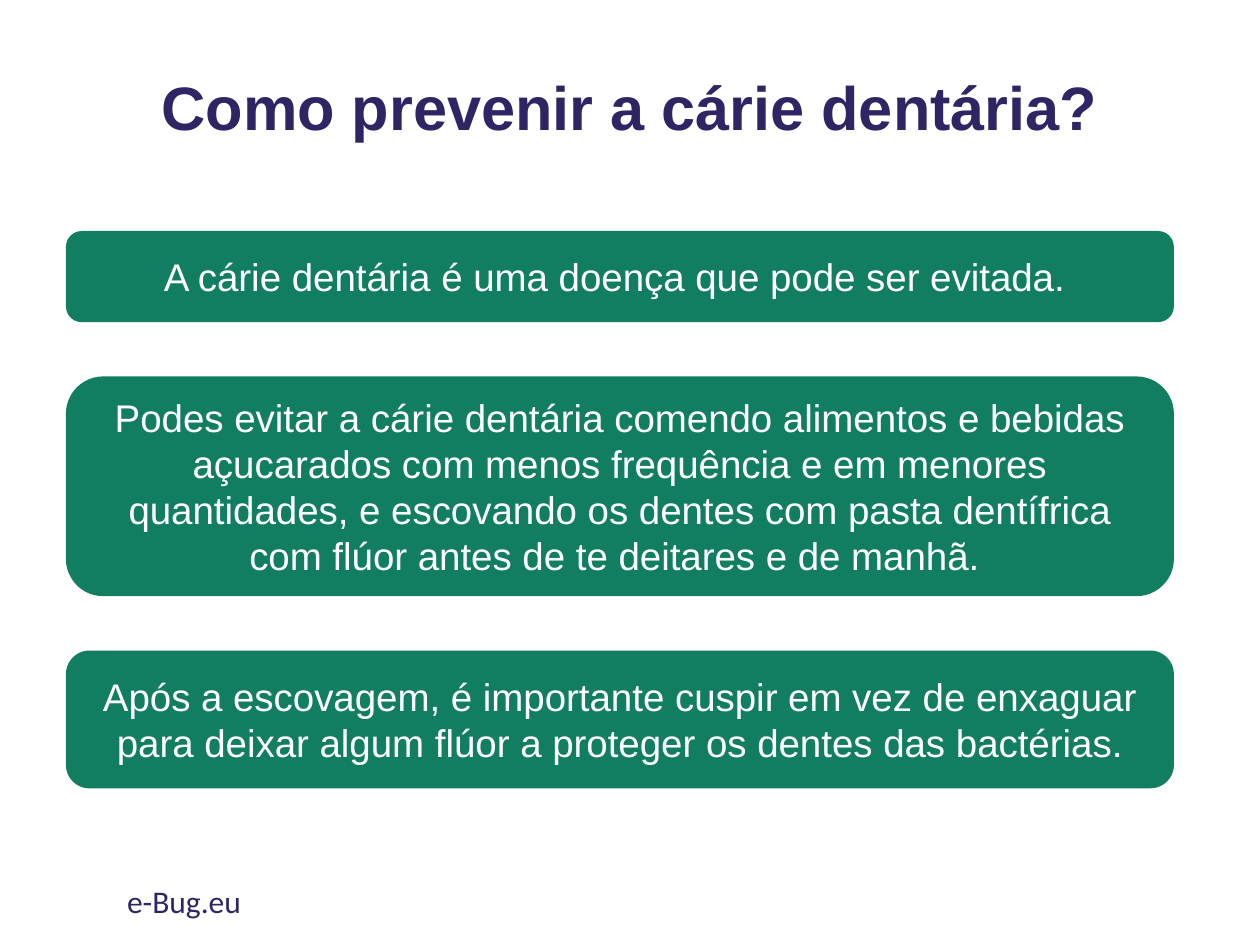
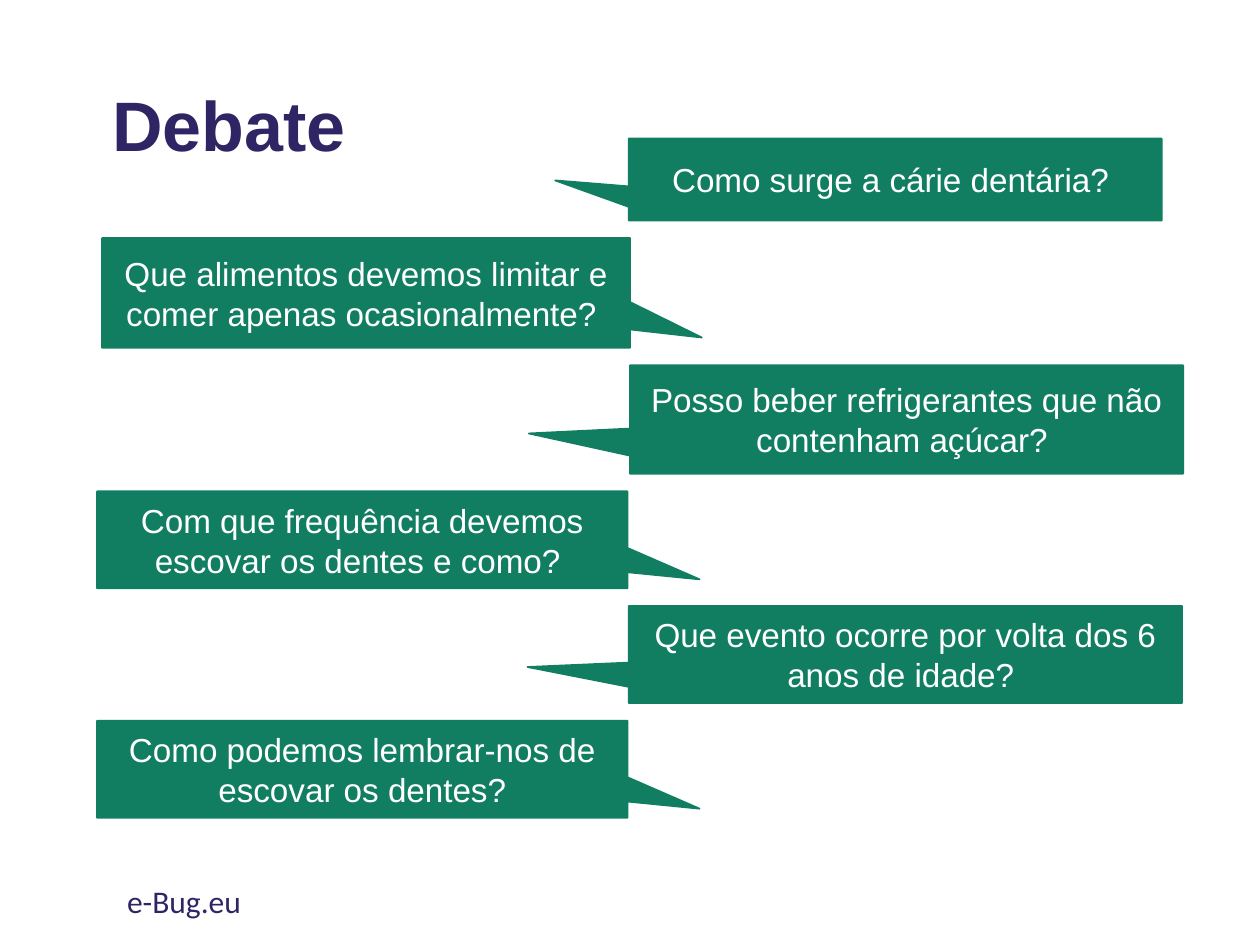
import pptx
import pptx.util
import pptx.dml.color
import pptx.enum.shapes
import pptx.enum.text

COLORS = {"ink": "302564", "green": "117E62", "white": "FFFFFF"}
COLUMNS, ROWS = 100, 75
WIDTH, HEIGHT = pptx.util.Inches(10), pptx.util.Inches(7.5)
TITLE_ONLY = 5
SHAPES = pptx.enum.shapes.MSO_SHAPE
ALIGN = pptx.enum.text.PP_ALIGN
ANCHOR = pptx.enum.text.MSO_ANCHOR

CARD_LEFT, CARD_WIDTH, CARD_GAP = 5.3, 87.8, 4.45
CARDS = [
    (7.1, "A cárie dentária é uma doença que pode ser evitada. "),
    (17.3, "Podes evitar a cárie dentária comendo alimentos e bebidas açucarados "
           "com menos frequência e em menores quantidades, e escovando os dentes "
           "com pasta dentífrica com flúor antes de te deitares e de manhã. "),
    (10.8, "Após a escovagem, é importante cuspir em vez de enxaguar para deixar "
           "algum flúor a proteger os dentes das bactérias."),
]

QUESTION_GAP = 1.4
TAIL_RIGHT, TAIL_LEFT, TAIL_LEFT_SHORT = (0.636, 0.407), (-0.683, 0.129), (-0.638, 0.011)
QUESTIONS = [
    (49.9, 42.3, 6.5, TAIL_LEFT_SHORT, "Como surge a cárie dentária? "),
    (8.1, 41.9, 8.7, TAIL_RIGHT, "Que alimentos devemos limitar e comer apenas ocasionalmente? "),
    (50, 43.9, 8.6, TAIL_LEFT, "Posso beber refrigerantes que não contenham açúcar? "),
    (7.7, 42.1, 7.7, TAIL_RIGHT, "Com que frequência devemos escovar os dentes e como? "),
    (49.9, 43.9, 7.7, TAIL_LEFT, "Que evento ocorre por volta dos 6 anos de idade? "),
    (7.7, 42.1, 7.7, TAIL_RIGHT, "Como podemos lembrar-nos de escovar os dentes?"),
]


def grid(left, top, width, height):
    return (round(left * WIDTH / COLUMNS), round(top * HEIGHT / ROWS),
            round(width * WIDTH / COLUMNS), round(height * HEIGHT / ROWS))


def color(name):
    return pptx.dml.color.RGBColor.from_string(COLORS[name])


def write(shape, text, size, ink="ink", font="Arial", bold=False,
          align=ALIGN.LEFT, anchor=ANCHOR.MIDDLE, line_spacing=None):
    frame = shape.text_frame
    frame.word_wrap = True
    frame.auto_size = pptx.enum.text.MSO_AUTO_SIZE.NONE
    frame.vertical_anchor = anchor
    paragraph = frame.paragraphs[0]
    paragraph.alignment = align
    paragraph.line_spacing = line_spacing
    run = paragraph.add_run()
    run.text = text
    run.font.name = font
    run.font.size = pptx.util.Pt(size)
    run.font.bold = bold
    run.font.color.rgb = color(ink)


def add_titled_slide(presentation, title, box, size, align):
    slide = presentation.slides.add_slide(presentation.slide_layouts[TITLE_ONLY])
    shape = slide.shapes.title
    shape.left, shape.top, shape.width, shape.height = grid(*box)
    write(shape, title, size, bold=True, align=align, line_spacing=0.9)
    footer = slide.shapes.add_textbox(*grid(9.1, 69.5, 33.8, 4))
    write(footer, "e-Bug.eu", 18, font="Calibri", anchor=ANCHOR.TOP)
    return slide


def add_panel(slide, kind, box, adjustments, text, size):
    shape = slide.shapes.add_shape(kind, *grid(*box))
    shape.shadow.inherit = False
    for index, value in enumerate(adjustments):
        shape.adjustments[index] = value
    shape.fill.solid()
    shape.fill.fore_color.rgb = color("green")
    shape.line.color.rgb = color("green")
    shape.line.width = pptx.util.Pt(1)
    write(shape, text, size, ink="white", align=ALIGN.CENTER)


def add_prevention_slide(presentation):
    slide = add_titled_slide(presentation, "Como prevenir a cárie dentária?",
                             (6.9, 4.2, 86.2, 9.1), 35, ALIGN.CENTER)
    top = 18.4
    for height, text in CARDS:
        add_panel(slide, SHAPES.ROUNDED_RECTANGLE,
                  (CARD_LEFT, top, CARD_WIDTH, height), (0.167,), text, 22)
        top += height + CARD_GAP


def add_debate_slide(presentation):
    slide = add_titled_slide(presentation, "Debate", (7.9, 3, 86.2, 14.5), 40, ALIGN.LEFT)
    top = 11
    for left, width, height, tail, text in QUESTIONS:
        add_panel(slide, SHAPES.RECTANGULAR_CALLOUT,
                  (left, top, width, height), tail, text, 19)
        top += height + QUESTION_GAP


def main():
    presentation = pptx.Presentation()
    presentation.slide_width, presentation.slide_height = WIDTH, HEIGHT
    add_prevention_slide(presentation)
    add_debate_slide(presentation)
    presentation.save("out.pptx")


if __name__ == "__main__":
    main()
